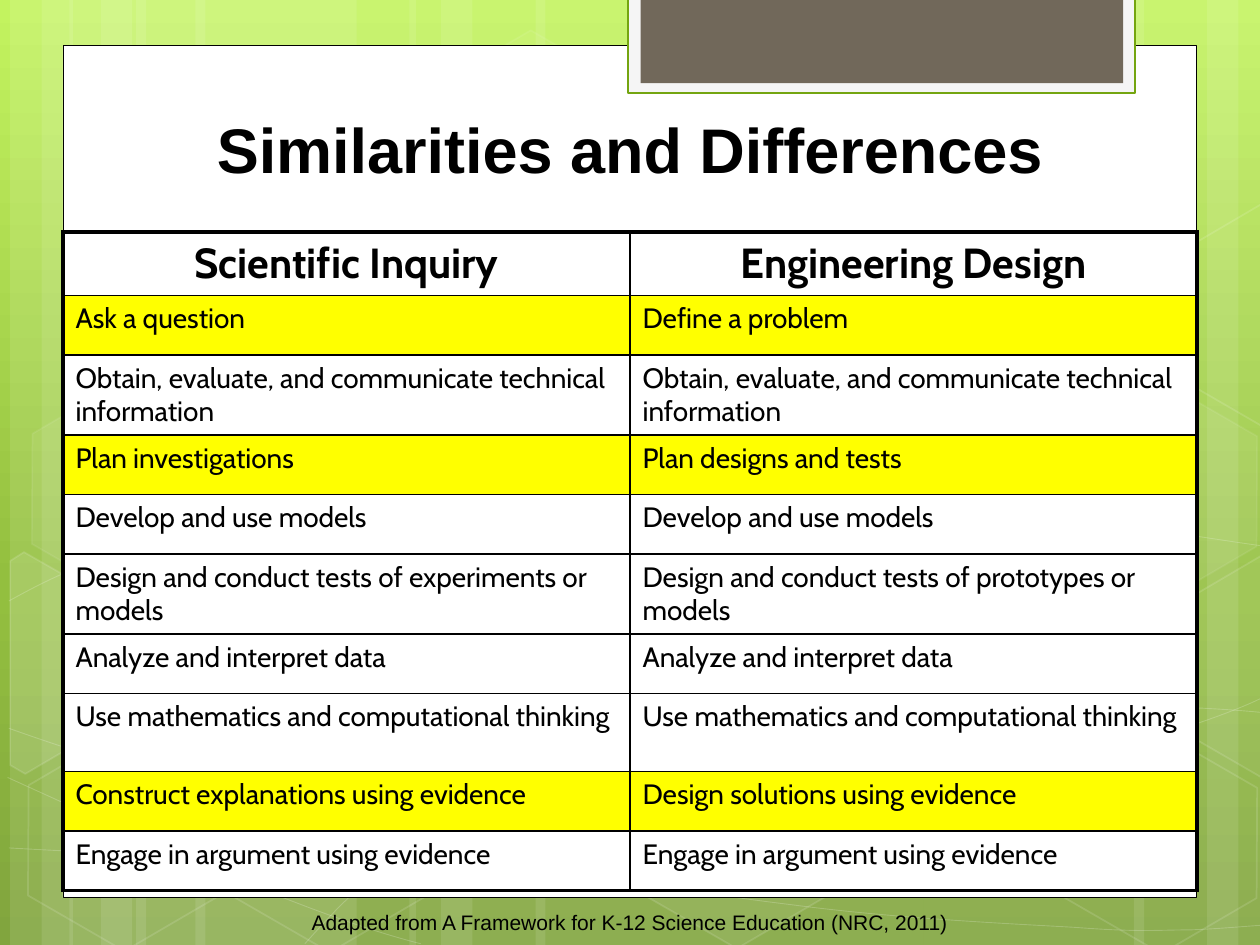
from dataclasses import dataclass
from itertools import product
from math import cos, radians, sin

from lxml.etree import SubElement
from pptx import Presentation
from pptx.dml.color import RGBColor
from pptx.enum.shapes import MSO_SHAPE
from pptx.enum.text import MSO_ANCHOR, MSO_AUTO_SIZE, PP_ALIGN
from pptx.oxml.ns import qn
from pptx.util import Inches, Pt


@dataclass(frozen=True)
class Theme:
    """Colours, fonts and sizes of the deck."""
    ink: str = "000000"
    paper: str = "FFFFFF"
    mark: str = "FFFF00"
    tab: str = "71685A"
    tab_frame: str = "F5F5F5"
    tab_line: str = "74A510"
    backdrop: tuple = ((0, "C3F35F"), (62, "93BF3F"), (100, "81A53E"))
    plain_font: str = "Arial"
    table_font: str = "Cabin"
    title_size: float = 36
    heading_size: float = 24
    cell_size: float = 16
    credit_size: float = 12
    thick: float = 2.25
    thin: float = 1


THEME = Theme()
COLUMNS, ROWS = 100, 75
WIDTH, HEIGHT = Inches(10), Inches(7.5)
TILT = 30

BANDS = [(10.8, 17.5), (0.8, 5), (3.3, 8.3), (15.5, 17.5), (5.5, 5), (8, 8.3),
         (73.3, 17.5), (95.8, 5), (90, 8.3), (42.5, 30.8), (32.5, 5), (35, 8.3)]
CURVES = [
    [(0.7, 67.3), (6.1, 67.6), (11.5, 67.9), (19, 67.8), (26.5, 67.7), (35.8, 67.5),
     (45.8, 66.5), (55.8, 65.5), (70, 63.6), (79.2, 61.7), (88.3, 59.8), (97.7, 56.8),
     (100.7, 55.1)],
    [(0.7, 47.7), (3.6, 46.1), (6.5, 44.6), (12.1, 43.1), (17.8, 41.6), (25.9, 39.4),
     (34.7, 38.7), (43.6, 38), (54.4, 37.9), (65.4, 38.7), (76.4, 39.5), (94.7, 42.6),
     (100.7, 43.4)],
    [(0.6, 61.7), (12.7, 67.2), (24.7, 72.7), (33.4, 74.9)],
    [(0.7, 57.8), (3.8, 58.9), (7, 60), (12.8, 61.6), (18.6, 63.1), (27.3, 65.6),
     (35.7, 67.3), (44, 69), (54.5, 70.8), (62.8, 71.8), (71.1, 72.9), (80, 73.3),
     (85.3, 73.6), (90.5, 74), (91.9, 73.8), (94.5, 73.8), (97.1, 73.7), (98.9, 73.5),
     (100.7, 73.4)],
    [(24.2, 74.9), (26, 72.9), (27.8, 70.9), (30.2, 69.1), (32.6, 67.3), (36, 65.3),
     (38.8, 63.9), (41.6, 62.5), (43.3, 61.9), (47, 60.9), (50.6, 59.9), (57.3, 58.5),
     (60.8, 57.8), (64.4, 57.1), (64.9, 57.1), (68, 56.9), (71.1, 56.6), (76, 56.3),
     (79.4, 56.2), (82.9, 56.1), (88.6, 56.2), (88.6, 56.2), (91, 56.2), (93, 56.2),
     (95.3, 56.2), (97.1, 56.3), (98.8, 56.4), (100.6, 56.6)],
]
HEXAGONS = [(33.4, 3.6, 4, 8), (49.7, 58.9, 6, 12), (1.1, 59.1, 0, 12),
            (1.4, 31.2, 7, 8), (17.4, 59.2, 0, 12), (75.3, 45.3, 10, 12),
            (83.4, 59.3, 0, 12), (83.4, 31.4, 7, 8)]
LEFT_CUT = [(0.8, 44.5), (1.9, 43.8), (9.6, 48.2), (9.5, 57), (2, 61.4), (0.8, 60.7)]
LEFT_CENTRE = (3.6, 53.5)
RIGHT_CUT = [(92.6, 48.5), (100.1, 44.1), (100.9, 44.6), (100.9, 61.3), (100.2, 61.7),
             (92.6, 57.3)]
RIGHT_CENTRE = (98.5, 52)
CUT_RISE = 27.9

HEADINGS = ("Scientific Inquiry", "Engineering Design")
PRACTICES = [
    ("Ask a question", "Define a problem"),
    ("Obtain, evaluate, and communicate technical information",) * 2,
    ("Plan investigations", "Plan designs and tests"),
    ("Develop and use models",) * 2,
    ("Design and conduct tests of experiments or models",
     "Design and conduct tests of prototypes or models"),
    ("Analyze and interpret data",) * 2,
    ("Use mathematics and computational thinking",) * 2,
    ("Construct explanations using evidence", "Design solutions using evidence"),
    ("Engage in argument using evidence",) * 2,
]
MARKED_ROWS = {1, 3, 8}
TALL_ROWS = {2, 5, 7}


def across(columns):
    """Turn grid columns into a length."""
    return round(WIDTH * columns / COLUMNS)


def down(rows):
    """Turn grid rows into a length."""
    return round(HEIGHT * rows / ROWS)


def place(left, top, width, height):
    """Give a grid rectangle as four lengths."""
    return across(left), down(top), across(width), down(height)


def assign(target, values):
    """Set every attribute named in values."""
    for name, value in values.items():
        setattr(target, name, value)


def paint(fill, color):
    """Fill with one colour, or with none."""
    if color:
        fill.solid()
        fill.fore_color.rgb = RGBColor.from_string(color)
    else:
        fill.background()


def style(shape, fill=None, line=None, weight=1, fill_alpha=100, line_alpha=100):
    """Set fill, outline and their opacity in percent."""
    shape.shadow.inherit = False
    paint(shape.fill, fill)
    paint(shape.line.fill, line)
    if line:
        shape.line.width = Pt(weight)
    for route, alpha in (("", fill_alpha), ("a:ln/", line_alpha)):
        for color in shape.element.spPr.xpath(f"{route}a:solidFill/a:srgbClr"):
            if alpha < 100:
                SubElement(color, qn("a:alpha"), val=str(alpha * 1000))


def add_block(page, kind, area, **look):
    """Add a styled preset shape."""
    shape = page.shapes.add_shape(kind, *place(*area))
    style(shape, **look)
    return shape


def add_outline(page, points, closed, **look):
    """Add a styled freeform through grid points."""
    lengths = [(across(x), down(y)) for x, y in points]
    builder = page.shapes.build_freeform(*lengths[0], scale=1.0)
    builder.add_line_segments(lengths[1:], close=closed)
    shape = builder.convert_to_shape()
    style(shape, **look)
    return shape


def add_curve(page, knots, **look):
    """Add an open chain of cubic curves."""
    shape = add_outline(page, knots, False, **look)
    route = shape.element.spPr.xpath(".//a:path")[0]
    steps = route.xpath("a:lnTo")
    for first in range(0, len(steps), 3):
        cubic = SubElement(route, qn("a:cubicBezTo"))
        for step in steps[first:first + 3]:
            cubic.append(step[0])
            route.remove(step)


def add_cut_hexagon(page, points, centre, **look):
    """Add a tilted hexagon that the slide's edge cuts off."""
    c, s = cos(radians(TILT)), sin(radians(TILT))
    offsets = [(x - centre[0], y - centre[1]) for x, y in points]
    upright = [(centre[0] + x * c + y * s, centre[1] + y * c - x * s) for x, y in offsets]
    add_outline(page, upright, True, **look).rotation = TILT


def write(frame, text, font, size, bold=False, align=PP_ALIGN.LEFT):
    """Write one formatted paragraph."""
    para = frame.paragraphs[0]
    para.alignment = align
    span = para.add_run()
    span.text = text
    assign(span.font, {"name": font, "size": Pt(size), "bold": bold})
    span.font.color.rgb = RGBColor.from_string(THEME.ink)


def write_line(box, area, text, size, bold):
    """Place a box and write its centred line."""
    assign(box, dict(zip(("left", "top", "width", "height"), place(*area))))
    assign(box.text_frame, {"word_wrap": True, "auto_size": MSO_AUTO_SIZE.NONE,
                            "vertical_anchor": MSO_ANCHOR.TOP})
    write(box.text_frame, text, THEME.plain_font, size, bold, PP_ALIGN.CENTER)


def add_backdrop(page):
    """Paint the gradient, bands, curves and hexagons."""
    fill = page.background.fill
    fill.gradient()
    fill.gradient_angle = 270
    stops = page.element.xpath(".//p:bg//a:gsLst")[0]
    for stop in list(stops):
        stops.remove(stop)
    for position, color in THEME.backdrop:
        stop = SubElement(stops, qn("a:gs"), pos=str(position * 1000))
        SubElement(stop, qn("a:srgbClr"), val=color)
    white = THEME.paper
    for left, width in BANDS:
        add_block(page, MSO_SHAPE.RECTANGLE, (left, 0, width, ROWS),
                  fill=white, fill_alpha=10)
    for knots in CURVES:
        add_curve(page, knots, line=white, weight=0.5, line_alpha=20)
    for left, top, fill_alpha, line_alpha in HEXAGONS:
        hexagon = add_block(page, MSO_SHAPE.HEXAGON, (left, top, 17.5, 15.2),
                            fill=white if fill_alpha else None, line=white,
                            fill_alpha=fill_alpha, line_alpha=line_alpha)
        hexagon.rotation = TILT
        hexagon.adjustments[0] = 0.285
    *raised, raised_centre = [(x, y - CUT_RISE) for x, y in (*RIGHT_CUT, RIGHT_CENTRE)]
    for points, centre, alpha in ((LEFT_CUT, LEFT_CENTRE, 10),
                                  (RIGHT_CUT, RIGHT_CENTRE, 4),
                                  (raised, raised_centre, 0)):
        add_cut_hexagon(page, points, centre, fill=white if alpha else None,
                        line=white, fill_alpha=alpha, line_alpha=12)


def add_panel(page):
    """Add the white sheet and the tab at its top."""
    for area, look in (
            ((5, 3.6, 90, 67.65), {"fill": THEME.paper, "line": THEME.ink, "weight": 0.5}),
            ((49.85, -0.2, 40.25, 7.6),
             {"fill": THEME.tab_frame, "line": THEME.tab_line, "weight": 1.25}),
            ((50.85, -0.2, 38.3, 6.8), {"fill": THEME.tab})):
        add_block(page, MSO_SHAPE.RECTANGLE, area, **look)


def add_borders(cell, outer_sides):
    """Rule a cell, thicker on the table's outer sides."""
    properties = cell._tc.get_or_add_tcPr()
    for side in "LRTB":
        weight = THEME.thick if side in outer_sides else THEME.thin
        line = SubElement(properties, qn(f"a:ln{side}"), w=str(Pt(weight)))
        fill = SubElement(line, qn("a:solidFill"))
        SubElement(fill, qn("a:srgbClr"), val=THEME.ink)


def add_comparison(page):
    """Add the table of practices."""
    texts = [HEADINGS, *PRACTICES]
    last = len(texts) - 1
    table = page.shapes.add_table(len(texts), 2, *place(5, 18.4, 90, 52.2)).table
    assign(table, {"first_row": False, "horz_banding": False})
    for index, row in enumerate(table.rows):
        row.height = down(4.9 if index == 0 else 6.2 if index in TALL_ROWS else 4.71)
    for row, column in product(range(len(texts)), range(2)):
        cell = table.cell(row, column)
        sides = "LR"[column] + ("T" if row == 0 else "B" if row == last else "")
        add_borders(cell, sides)
        paint(cell.fill, THEME.mark if row in MARKED_ROWS else None)
        heading = row == 0
        write(cell.text_frame, texts[row][column], THEME.table_font,
              THEME.heading_size if heading else THEME.cell_size, heading,
              PP_ALIGN.CENTER if heading else PP_ALIGN.LEFT)


def main():
    """Build and save the deck."""
    deck = Presentation()
    assign(deck, {"slide_width": WIDTH, "slide_height": HEIGHT})
    page = deck.slides.add_slide(deck.slide_layouts[5])
    add_backdrop(page)
    add_panel(page)
    add_comparison(page)
    credit_area = (0, 71.7, 100, 3)
    write_line(page.shapes.add_textbox(*place(*credit_area)), credit_area,
               "Adapted from A Framework for K-12 Science Education (NRC, 2011)",
               THEME.credit_size, False)
    title = page.shapes.title
    page.shapes.element.append(title.element)
    write_line(title, (5, 8.3, 90, 7.1), "Similarities and Differences",
               THEME.title_size, True)
    deck.save("out.pptx")


if __name__ == "__main__":
    main()
